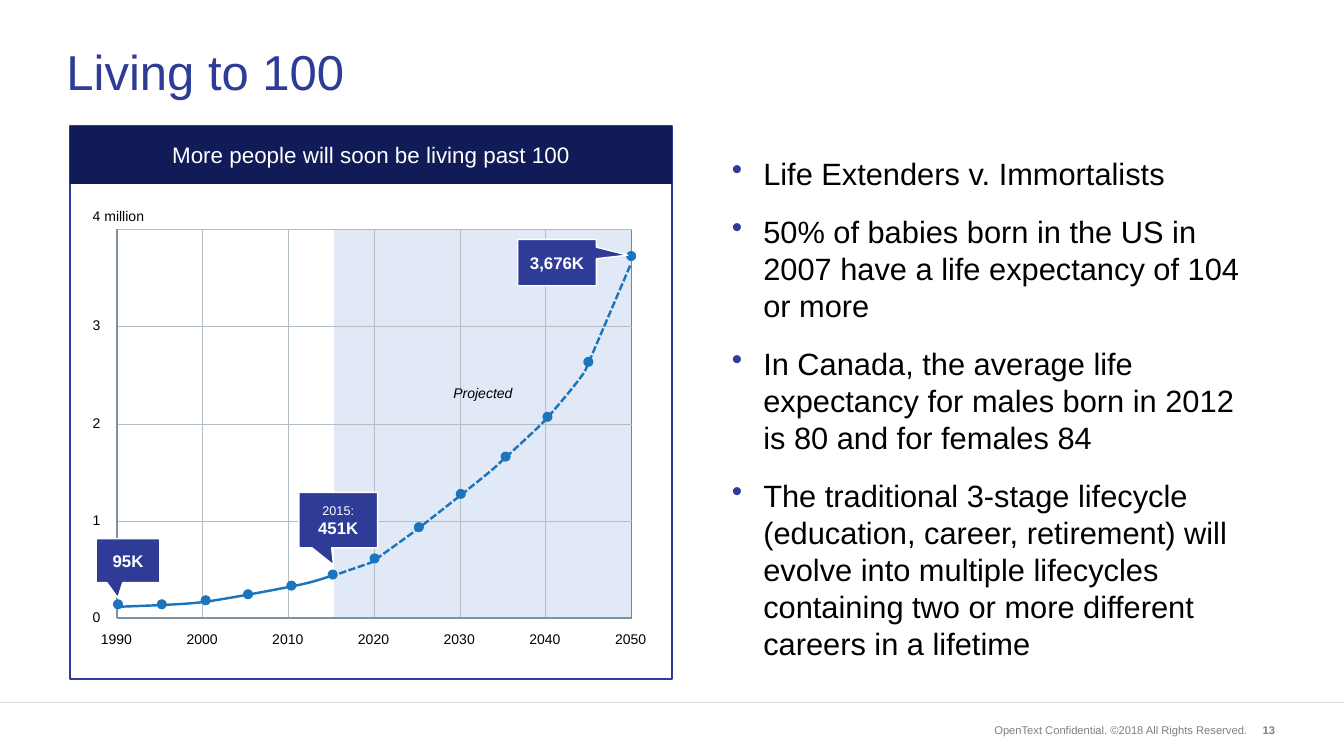
"""Build the "Living to 100" slide with its drawn growth curve and bullets."""
from dataclasses import dataclass

from lxml import etree
from pptx import Presentation
from pptx.dml.color import RGBColor
from pptx.enum.dml import MSO_LINE
from pptx.enum.shapes import MSO_CONNECTOR, MSO_SHAPE
from pptx.enum.text import MSO_ANCHOR, PP_ALIGN
from pptx.oxml.ns import qn
from pptx.util import Inches, Pt

RECT, OVAL, CALLOUT = MSO_SHAPE.RECTANGLE, MSO_SHAPE.OVAL, MSO_SHAPE.RECTANGULAR_CALLOUT
LEFT, CENTER, RIGHT = PP_ALIGN.LEFT, PP_ALIGN.CENTER, PP_ALIGN.RIGHT
TOP, MIDDLE = MSO_ANCHOR.TOP, MSO_ANCHOR.MIDDLE
STRAIGHT, DASH = MSO_CONNECTOR.STRAIGHT, MSO_LINE.SQUARE_DOT


@dataclass(frozen=True)
class Theme:
    font: str = "Arial"
    accent: str = "2E3C98"
    header: str = "111B58"
    curve: str = "1B75BC"
    shade: str = "E1E8F6"
    grid: str = "B2BEC5"
    axis: str = "7E929F"
    edge: str = "808285"
    rule: str = "D9D9D9"
    muted: str = "808080"
    black: str = "000000"
    white: str = "FFFFFF"
    title_size: int = 70
    body_size: int = 44
    header_size: int = 32
    value_size: int = 24
    label_size: int = 20
    note_size: int = 18
    footer_size: int = 16


T = Theme()
PLOT_X, PLOT_Y, STEP_X, STEP_Y = 2.32, 4.55, 1.7, 1.93
PLOT_RIGHT, PLOT_BOTTOM = 12.53, PLOT_Y + 4 * STEP_Y
DOT = 0.2
YEARS = range(1990, 2051, 10)
POINTS = [(2.24, 11.89), (3.11, 11.89), (3.98, 11.81), (4.82, 11.69), (5.68, 11.52),
          (6.5, 11.3), (7.33, 10.98), (8.21, 10.36), (9.04, 9.7), (9.93, 8.96),
          (10.76, 8.17), (11.57, 7.08), (12.42, 4.98)]
ACTUAL = [(2.3, 12.04),
          (2.3, 12.04), (3.64, 12), (4, 11.95),
          (4.35, 11.91), (5.87, 11.63), (6.09, 11.57),
          (6.18, 11.55), (6.35, 11.5), (6.56, 11.43)]
PROJECTED = [(12.5, 5.27),
             (12.5, 5.27), (11.72, 7.1), (11.61, 7.35),
             (11.56, 7.47), (11.01, 8.12), (10.83, 8.32),
             (10.66, 8.51), (9.98, 9.12), (9.81, 9.28),
             (9.64, 9.44), (8.23, 10.54), (8.23, 10.54),
             (7.37, 11.16), (7.37, 11.16), (7.37, 11.16),
             (6.56, 11.44), (6.56, 11.44), (6.56, 11.44)]
BULLETS = [
    "Life Extenders v. Immortalists",
    "50% of babies born in the US in 2007 have a life expectancy of 104 or more",
    "In Canada, the average life expectancy for males born in 2012 is 80 and for females 84",
    "The traditional 3-stage lifecycle (education, career, retirement) will evolve into "
    "multiple lifecycles containing two or more different careers in a lifetime",
]


def rgb(value):
    return RGBColor.from_string(value)


def add_run(p, text, size, color, bold=False, italic=False):
    r = p.add_run()
    r.text = text
    r.font.name, r.font.size = T.font, Pt(size)
    r.font.color.rgb = rgb(color)
    r.font.bold, r.font.italic = bold, italic


def add_text(s, box, text, size, color=T.black, align=LEFT, anchor=TOP, **style):
    tf = s.shapes.add_textbox(*map(Inches, box)).text_frame
    tf.word_wrap, tf.vertical_anchor = True, anchor
    p = tf.paragraphs[0]
    p.alignment = align
    add_run(p, text, size, color, **style)
    return p


def style_shape(sp, fill=None, line=None, width=1):
    sp.shadow.inherit = False
    if fill:
        sp.fill.solid()
        sp.fill.fore_color.rgb = rgb(fill)
    else:
        sp.fill.background()
    if line:
        sp.line.color.rgb = rgb(line)
        sp.line.width = Pt(width)
    else:
        sp.line.fill.background()


def add_box(s, kind, box, runs=(), **style):
    sp = s.shapes.add_shape(kind, *map(Inches, box))
    style_shape(sp, **style)
    if runs:
        tf = sp.text_frame
        tf.word_wrap, tf.vertical_anchor = True, MIDDLE
        p = tf.paragraphs[0]
        p.alignment = CENTER
        for text, size, bold in runs:
            add_run(p, text, size, T.white, bold)
    return sp


def add_line(s, x1, y1, x2, y2, color, width):
    c = s.shapes.add_connector(STRAIGHT, *map(Inches, (x1, y1, x2, y2)))
    c.line.color.rgb = rgb(color)
    c.line.width = Pt(width)
    etree.SubElement(c._element.spPr, qn("a:effectLst"))


def add_callout(s, box, tip, runs):
    sp = add_box(s, CALLOUT, box, runs, fill=T.accent, line=T.white, width=2)
    sp.adjustments[0], sp.adjustments[1] = tip


def bezier(a, b, c, d, t):
    u = 1 - t
    return [Inches(u**3 * i + 3 * u * u * t * j + 3 * u * t * t * k + t**3 * m)
            for i, j, k, m in zip(a, b, c, d)]


def add_curve(s, knots, dash=None, steps=8):
    vertices = [bezier(*knots[i:i + 4], n / steps)
                for i in range(0, len(knots) - 1, 3) for n in range(1, steps + 1)]
    fb = s.shapes.build_freeform(*map(Inches, knots[0]))
    fb.add_line_segments(vertices, close=False)
    sp = fb.convert_to_shape()
    style_shape(sp, line=T.curve, width=3.5)
    if dash:
        sp.line.dash_style = dash


def add_axes(s):
    add_box(s, RECT, (6.63, 4.56, 5.89, 7.7), fill=T.shade)
    add_line(s, PLOT_RIGHT, PLOT_Y, PLOT_RIGHT, PLOT_BOTTOM, T.edge, 0.5)
    for i, year in enumerate(YEARS):
        x = PLOT_X + i * STEP_X
        if 0 < i < len(YEARS) - 1:
            add_line(s, x, PLOT_Y, x, PLOT_BOTTOM, T.grid, 0.5)
        add_text(s, (x - 0.66, 12.47, 1.3, 0.51), str(year), T.label_size, align=CENTER)
    for i in range(4):
        y = PLOT_Y + i * STEP_Y
        add_line(s, PLOT_X, y, PLOT_RIGHT, y, T.grid, 0.5)
        add_text(s, (1.74, y + STEP_Y - 0.24, 0.62, 0.51), str(3 - i), T.label_size)
    add_text(s, (1.74, 4.06, 1.23, 0.51), "4 million", T.label_size)
    add_line(s, PLOT_X, PLOT_Y, PLOT_X, PLOT_BOTTOM, T.axis, 3)
    add_line(s, PLOT_X, PLOT_BOTTOM, PLOT_RIGHT, PLOT_BOTTOM, T.axis, 3)


def add_growth(s):
    for x, y in POINTS:
        add_box(s, OVAL, (x, y, DOT, DOT), fill=T.curve)
    add_callout(s, (1.91, 10.69, 1.26, 0.87), (-0.16, 0.85), [("95K", T.value_size, True)])
    add_callout(s, (5.93, 9.77, 1.56, 1.1), (-0.06, 0.81),
                [("2015: ", T.note_size, False), ("451K", T.value_size, True)])
    add_callout(s, (10.27, 4.75, 1.56, 0.92), (0.9, -0.16), [("3,676K", T.value_size, True)])
    add_text(s, (8.78, 7.58, 1.6, 0.51), "Projected", T.label_size, align=CENTER, italic=True)
    add_curve(s, ACTUAL)
    add_curve(s, PROJECTED, DASH)


def add_bullets(s, box, items):
    tf = s.shapes.add_textbox(*map(Inches, box)).text_frame
    tf.word_wrap, tf.vertical_anchor = True, MIDDLE
    tf.margin_left = tf.margin_right = Inches(0.2)
    tf.margin_top, tf.margin_bottom = Inches(0), Inches(0.75)
    for i, text in enumerate(items):
        p = tf.add_paragraph() if i else tf.paragraphs[0]
        pPr = p._p.get_or_add_pPr()
        pPr.set("marL", str(Inches(0.62)))
        pPr.set("indent", str(-Inches(0.62)))
        clr = etree.SubElement(pPr, qn("a:buClr"))
        etree.SubElement(clr, qn("a:srgbClr"), val=T.accent)
        etree.SubElement(pPr, qn("a:buChar"), char="•")
        if i:
            p.space_before = Pt(30)
        add_run(p, text, T.body_size, T.black)


def add_footer(s):
    add_text(s, (18.92, 14.29, 5.92, 0.37), "OpenText Confidential. ©2018 All Rights Reserved.",
             T.footer_size, T.muted, RIGHT, MIDDLE)
    add_text(s, (24.68, 14.3, 0.71, 0.37), "13", T.footer_size, T.muted, RIGHT, bold=True)
    add_line(s, 0, 13.94, 26.66, 13.94, T.rule, 1)


def main():
    prs = Presentation()
    prs.slide_width, prs.slide_height = Inches(26.66), Inches(15)
    s = prs.slides.add_slide(prs.slide_layouts[6])
    add_footer(s)
    title = add_text(s, (1.22, 0.38, 24.08, 2.13), "Living to 100", T.title_size, T.accent,
                     anchor=MIDDLE)
    title.line_spacing = Pt(80)
    add_axes(s)
    add_growth(s)
    add_box(s, RECT, (1.38, 2.5, 11.95, 10.98), line=T.accent, width=3)
    add_box(s, RECT, (1.39, 2.5, 11.94, 1.15),
            [("More people will soon be living past 100", T.header_size, False)], fill=T.header)
    add_bullets(s, (14.32, 3.13, 10.98, 10.68), BULLETS)
    prs.save("out.pptx")


if __name__ == "__main__":
    main()
